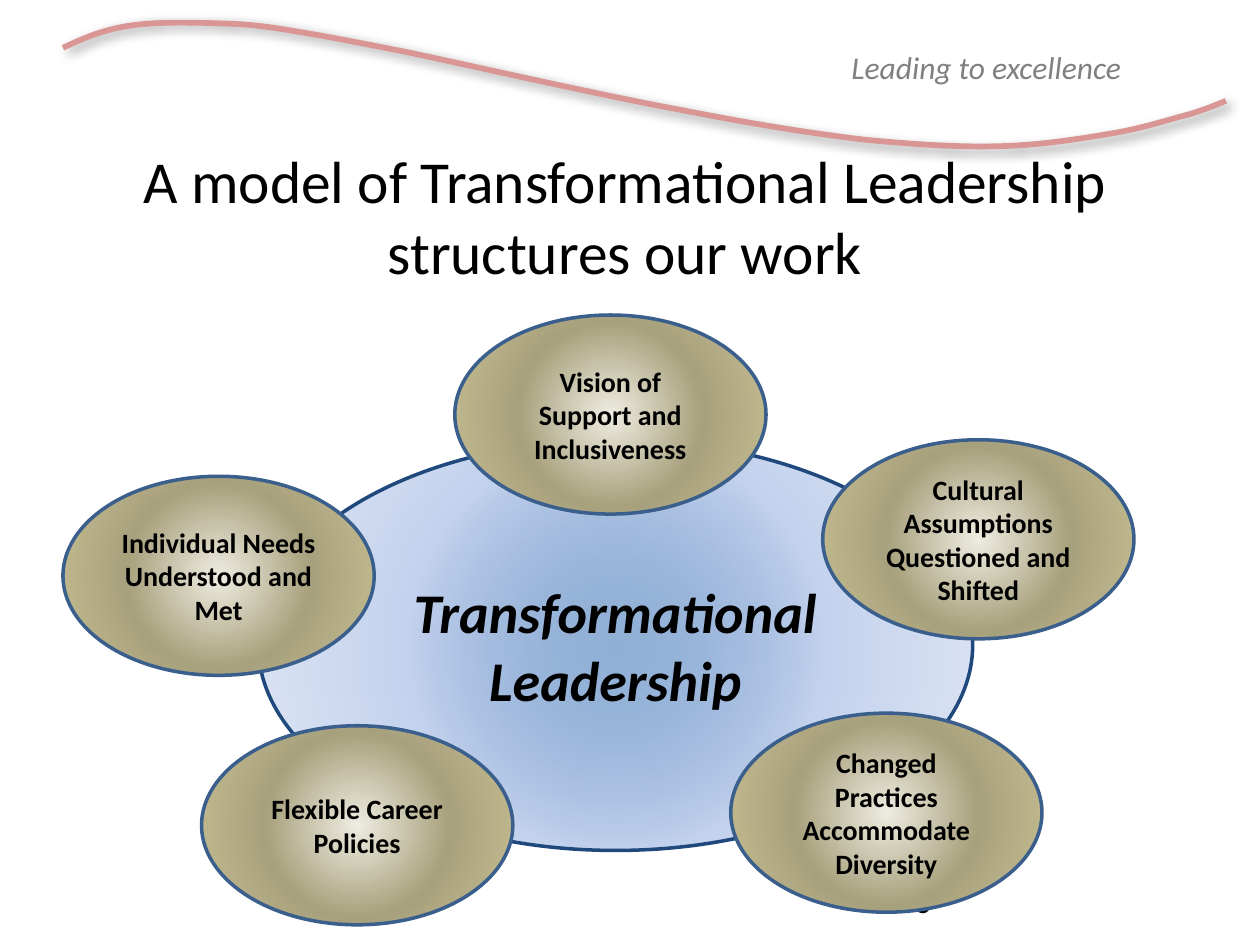
import pptx
import pptx.dml.color
import pptx.enum.shapes
import pptx.enum.text
import pptx.oxml
import pptx.oxml.ns
import pptx.util

COLUMNS, ROWS = 100, 75
BLACK = "000000"
ALIGN = pptx.enum.text.PP_ALIGN
ANCHOR = pptx.enum.text.MSO_ANCHOR
NAMESPACE = pptx.oxml.ns.nsdecls("a")
QN = pptx.oxml.ns.qn


def color(value):
    return pptx.dml.color.RGBColor.from_string(value)


class Deck:
    font = "Calibri"

    def __init__(self):
        self.presentation = pptx.Presentation()
        self.presentation.slide_width = pptx.util.Inches(10)
        self.presentation.slide_height = pptx.util.Inches(7.5)
        blank = self.presentation.slide_layouts[6]
        self.slide = self.presentation.slides.add_slide(blank)

    def x(self, columns):
        return round(self.presentation.slide_width * columns / COLUMNS)

    def y(self, rows):
        return round(self.presentation.slide_height * rows / ROWS)

    def box(self, left, top, width, height):
        return self.x(left), self.y(top), self.x(width), self.y(height)

    def label(self, shape, text, size, tone=BLACK, align=ALIGN.CENTER,
              anchor=ANCHOR.MIDDLE, bold=False, italic=False, wrap=True):
        frame = shape.text_frame
        frame.word_wrap = wrap
        frame.vertical_anchor = anchor
        frame.text = text
        for paragraph in frame.paragraphs:
            paragraph.alignment = align
            paragraph.font.name = self.font
            paragraph.font.size = pptx.util.Pt(size)
            paragraph.font.color.rgb = color(tone)
            paragraph.font.bold = bold
            paragraph.font.italic = italic

    def text(self, place, text, size, **style):
        self.label(self.slide.shapes.add_textbox(*self.box(*place)), text, size, **style)

    def outline(self, shape, tone, width):
        shape.line.color.rgb = color(tone)
        shape.line.width = pptx.util.Pt(width)
        shape.shadow.inherit = False

    def ellipse(self, place, text, size, stops, edge, **style):
        oval = self.slide.shapes.add_shape(
            pptx.enum.shapes.MSO_SHAPE.OVAL, *self.box(*place))
        oval.fill.solid()
        stop_xml = "".join(
            f'<a:gs pos="{position * 1000}"><a:srgbClr val="{tone}">'
            f'<a:alpha val="{opacity * 1000}"/></a:srgbClr></a:gs>'
            for position, tone, opacity in stops)
        gradient = pptx.oxml.parse_xml(
            f'<a:gradFill {NAMESPACE} rotWithShape="1"><a:gsLst>{stop_xml}</a:gsLst>'
            '<a:path path="circle"><a:fillToRect l="50000" t="50000" r="50000" b="50000"/>'
            '</a:path></a:gradFill>')
        properties = oval._element.spPr
        properties.replace(properties.find(QN("a:solidFill")), gradient)
        self.outline(oval, edge, 2)
        self.label(oval, text, size, bold=True, **style)

    def wave(self, points, tone, width):
        start, *rest = [(self.x(column), self.y(row)) for column, row in points]
        builder = self.slide.shapes.build_freeform(*start)
        builder.add_line_segments(rest, close=False)
        curve = builder.convert_to_shape()
        curve.fill.background()
        self.outline(curve, tone, width)
        properties = curve._element.spPr
        segments = list(properties.iter(QN("a:lnTo")))
        for first in range(0, len(segments), 3):
            bezier = pptx.oxml.parse_xml(f"<a:cubicBezTo {NAMESPACE}/>")
            segments[first].addprevious(bezier)
            for segment in segments[first:first + 3]:
                bezier.append(segment[0])
                segment.getparent().remove(segment)
        properties.find(QN("a:effectLst")).append(pptx.oxml.parse_xml(
            f'<a:outerShdw {NAMESPACE} blurRad="{pptx.util.Pt(6)}" '
            f'dist="{pptx.util.Pt(3)}" dir="2700000" algn="tl" rotWithShape="0">'
            f'<a:srgbClr val="{BLACK}"><a:alpha val="40000"/></a:srgbClr></a:outerShdw>'))


def main():
    deck = Deck()
    deck.wave([
        (5, 3.8),
        (6.7, 3), (8.3, 2.3), (10.6, 2),
        (12.8, 1.7), (16, 1.8), (18.5, 1.9),
        (20.9, 2), (22.9, 2.4), (25.3, 2.8),
        (27.6, 3.2), (32.6, 4.2), (32.6, 4.2),
        (37.3, 5.2), (47.9, 7.6), (53.9, 8.7),
        (60, 9.9), (64.5, 10.6), (68.7, 11.1),
        (73, 11.5), (76.3, 11.7), (79.6, 11.6),
        (82.8, 11.5), (85.8, 11), (88.2, 10.6),
        (90.6, 10.2), (92.4, 9.6), (93.9, 9.2),
        (95.5, 8.8), (97.3, 8), (97.3, 8),
    ], "D99694", 3.25)
    deck.text((66.6, 3.3, 24.3, 4), "Leading to excellence", 18, tone="808080",
              align=ALIGN.LEFT, anchor=ANCHOR.TOP, italic=True, wrap=False)
    deck.text((71.7, 69.5, 23.3, 4), "5", 18, align=ALIGN.LEFT, anchor=ANCHOR.TOP)

    core_stops = [(0, "4F81BD", 62), (50, "C2D1ED", 100), (100, "E1E8F5", 100)]
    deck.ellipse((20.5, 34.9, 56.7, 32.6), "Transformational\nLeadership", 32,
                 core_stops, "1F497D", italic=True)

    element_stops = [(0, "EEECE1", 100), (50, "A8A17D", 100), (100, "C8C094", 100)]
    elements = [
        (36.1, 25, "Vision of Support and Inclusiveness"),
        (5, 37.8, "Individual Needs Understood and Met"),
        (16, 57.6, "Flexible Career Policies"),
        (65.3, 34.9, "Cultural Assumptions Questioned and Shifted"),
        (58, 56.6, "Changed Practices Accommodate Diversity"),
    ]
    for left, top, element in elements:
        deck.ellipse((left, top, 24.7, 15.8), element, 16, element_stops, "3A5F8C")

    deck.text((5, 14.2, 89.2, 5.8),
              "A model of Transformational Leadership structures our work", 34)
    deck.presentation.save("out.pptx")


if __name__ == "__main__":
    main()
